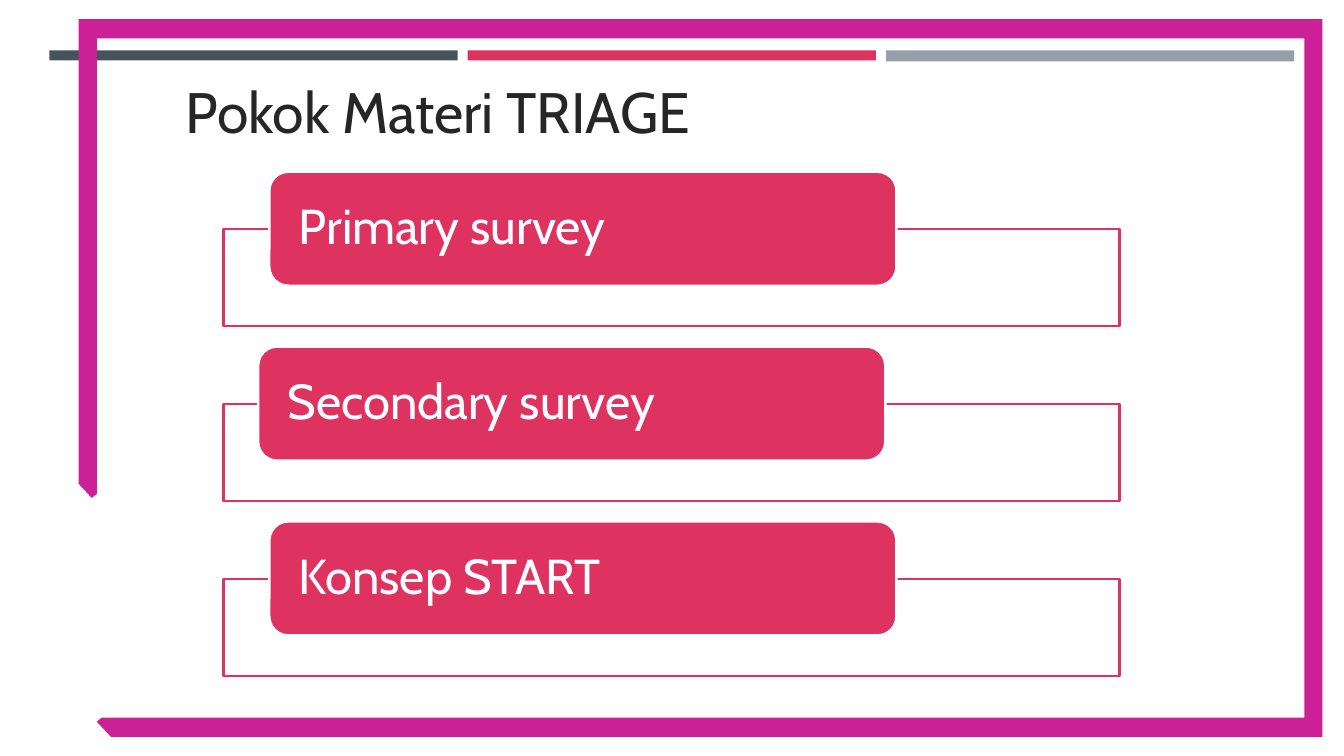
"""Build the slide that lists the triage topics."""
import dataclasses
import typing

import pptx
import pptx.dml.color
import pptx.enum.shapes
import pptx.enum.text
import pptx.util

Pt = pptx.util.Pt
Shapes = pptx.enum.shapes.MSO_SHAPE


@dataclasses.dataclass(frozen=True)
class Theme:
    font: str = "Cabin"
    title_size: float = 40.7
    label_size: float = 35
    outline: float = 1.75
    white: str = "FFFFFF"
    ink: str = "262626"
    slate: str = "465359"
    rose: str = "DE3261"
    silver: str = "969FA7"
    magenta: str = "CC2097"


class Box(typing.NamedTuple):
    left: float
    top: float
    width: float
    height: float


class Bar(typing.NamedTuple):
    color: str
    height: float


class Topic(typing.NamedTuple):
    text: str
    left: float


THEME = Theme()
BARS = (Bar(THEME.slate, 7.2), Bar(THEME.rose, 7.2), Bar(THEME.silver, 7.9))
BAR_PITCH = 298.8
TOPICS = (
    Topic("Primary survey", 192.4),
    Topic("Secondary survey", 184.4),
    Topic("Konsep START", 192.4),
)
TOPIC_PITCH = 124.9
FRAME = (
    (56.2, 13.7), (944.6, 13.7), (944.6, 526.3), (79.2, 526.3),
    (69.1, 515.5), (72.7, 512.6), (931.7, 512.6), (931.7, 27.4),
    (69.1, 27.4), (69.1, 352.8), (65.5, 355.7), (56.2, 345.6),
)


def rgb(color: str) -> pptx.dml.color.RGBColor:
    return pptx.dml.color.RGBColor.from_string(color)


def paint(shape, fill: str, line: typing.Optional[str] = None) -> None:
    shape.shadow.inherit = False
    shape.fill.solid()
    shape.fill.fore_color.rgb = rgb(fill)
    if line is None:
        shape.line.fill.background()
    else:
        shape.line.color.rgb = rgb(line)
        shape.line.width = Pt(THEME.outline)


def add_box(page, kind, box: Box, fill: str, line: typing.Optional[str] = None):
    shape = page.shapes.add_shape(kind, *map(Pt, box))
    paint(shape, fill, line)
    return shape


def write(shape, text: str, *, size: float, color: str, inset: float,
          spacing: float = 1, after: float = 0) -> None:
    frame = shape.text_frame
    frame.word_wrap = True
    frame.vertical_anchor = pptx.enum.text.MSO_ANCHOR.MIDDLE
    frame.margin_left = frame.margin_right = Pt(inset)
    frame.margin_top = frame.margin_bottom = 0
    para = frame.paragraphs[0]
    para.alignment = pptx.enum.text.PP_ALIGN.LEFT
    para.line_spacing = spacing
    para.space_after = Pt(after)
    span = para.add_run()
    span.text = text
    span.font.name = THEME.font
    span.font.size = Pt(size)
    span.font.color.rgb = rgb(color)


def add_frame(page) -> None:
    points = [(Pt(x), Pt(y)) for x, y in FRAME]
    outline = page.shapes.build_freeform(*points[0])
    outline.add_line_segments(points[1:])
    paint(outline.convert_to_shape(), THEME.magenta)


def add_topic(page, topic: Topic, offset: float) -> None:
    add_box(page, Shapes.RECTANGLE, Box(159.8, 163.6 + offset, 640, 69.3),
            THEME.white, THEME.rose)
    label = add_box(page, Shapes.ROUNDED_RECTANGLE,
                    Box(topic.left, 122.7 + offset, 448, 81.4),
                    THEME.rose, THEME.white)
    write(label, topic.text, size=THEME.label_size, color=THEME.white,
          inset=17, spacing=0.9)


def main() -> None:
    deck = pptx.Presentation()
    deck.slide_width, deck.slide_height = Pt(960), Pt(540)
    page = deck.slides.add_slide(deck.slide_layouts[6])
    for index, bar in enumerate(BARS):
        add_box(page, Shapes.RECTANGLE,
                Box(35.3 + index * BAR_PITCH, 36, 291.6, bar.height), bar.color)
    add_frame(page)
    title = page.shapes.add_textbox(*map(Pt, Box(125.3, 50.4, 805, 57)))
    write(title, "Pokok Materi TRIAGE", size=THEME.title_size,
          color=THEME.ink, inset=7.2, after=6)
    for index, topic in enumerate(TOPICS):
        add_topic(page, topic, index * TOPIC_PITCH)
    deck.save("out.pptx")


if __name__ == "__main__":
    main()
